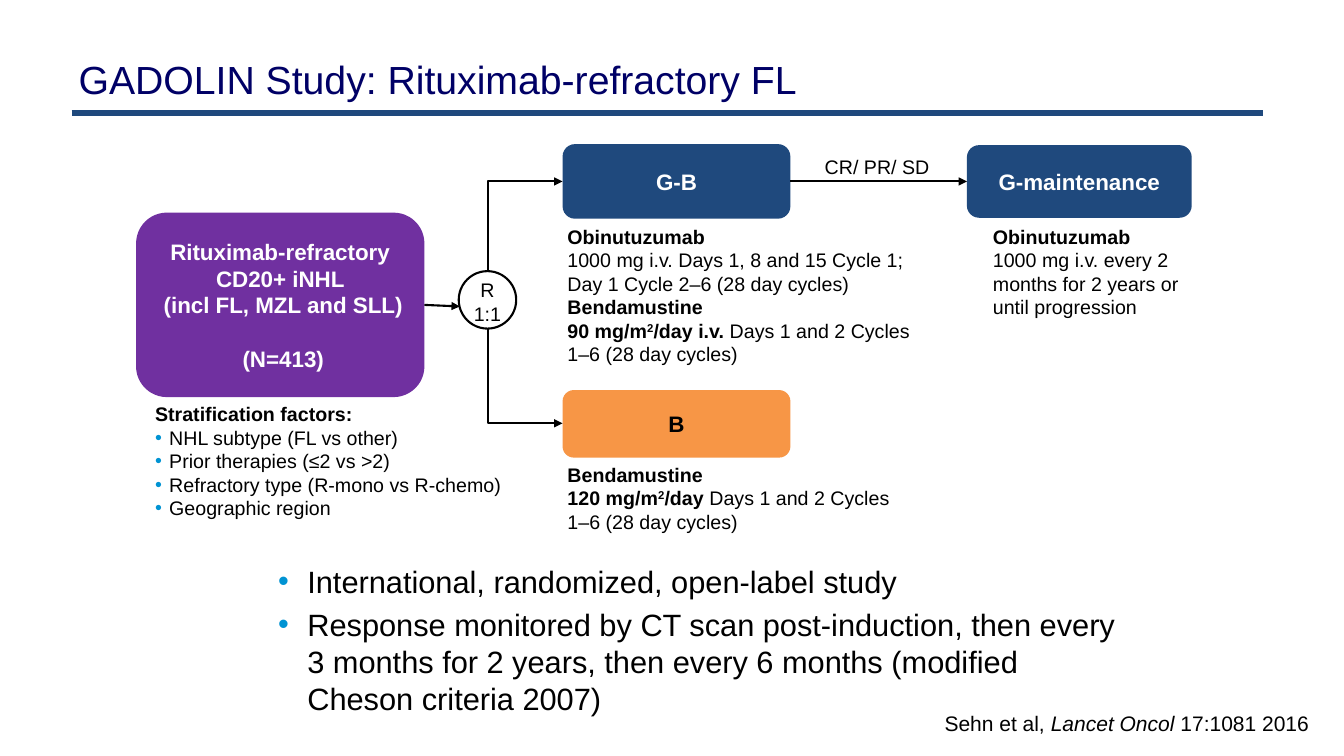
from pptx import Presentation, util as u
from pptx.dml.color import RGBColor
from pptx.enum import shapes as s, text as t
from pptx.oxml.ns import qn
from lxml import etree

HUE = {"ink": "000000", "white": "FFFFFF", "title": "000066", "navy": "1F497D",
       "plum": "7030A0", "gold": "F79646", "dot": "0093D3"}
deck = Presentation()
deck.slide_width, deck.slide_height = u.Inches(13.33), u.Inches(7.5)
cell = deck.slide_height / 75
page = deck.slides.add_slide(deck.slide_layouts[5])
draw = page.shapes


def grid(*cells):
    return [u.Emu(round(n * cell)) for n in cells]


def write(box, paras, size=14, hue="ink", align="LEFT", mid=False, inset=None,
          dots=0, indent=0, after=0, gap=0):
    frame = box.text_frame
    frame.word_wrap = True
    frame.vertical_anchor = t.MSO_ANCHOR.MIDDLE if mid else t.MSO_ANCHOR.TOP
    if inset is not None:
        frame.margin_left, frame.margin_top = u.Inches(inset), 0
        frame.margin_right = frame.margin_bottom = 0
    for i, runs in enumerate(paras):
        para = frame.paragraphs[0] if i == 0 else frame.add_paragraph()
        para.alignment = t.PP_ALIGN[align]
        if indent and i >= dots:
            props = para._p.get_or_add_pPr()
            props.set("marL", str(u.Inches(indent)))
            props.set("indent", str(-u.Inches(indent)))
            tint = etree.SubElement(props, qn("a:buClr"))
            etree.SubElement(tint, qn("a:srgbClr")).set("val", HUE["dot"])
            etree.SubElement(props, qn("a:buFont")).set("typeface", "Arial")
            etree.SubElement(props, qn("a:buChar")).set("char", "•")
        if after:
            para.space_after = u.Pt(after)
        if gap and i == len(paras) - 1:
            para.space_before = u.Pt(gap)
        for words, style in runs:
            for j, line in enumerate(words.split("\n")):
                if j:
                    para.add_line_break()
                run = para.add_run()
                run.text = line
                font = run.font
                font.name, font.size = "Arial", u.Pt(size)
                font.bold, font.italic = "b" in style, "i" in style
                font.color.rgb = RGBColor.from_string(HUE[hue])
                if "^" in style:
                    font._element.set("baseline", "30000")


head = draw.title
head.left, head.top, head.width, head.height = grid(6.8, 3.9, 90, 7.8)
write(head, [[("GADOLIN Study: Rituximab-refractory FL", "")]], size=28, hue="title", mid=True)

cards = {}
for name, place, fill, ink, paras, inset, gap in [
    ("combo", (55.8, 14.3, 22.6, 7.4), "navy", "white", [[("G-B", "b")]], 0, 0),
    ("single", (55.8, 38.7, 22.6, 6.7), "gold", "ink", [[("B", "b")]], 0, 0),
    ("cohort", (13.5, 21.1, 28.6, 18.3), "plum", "white",
     [[("Rituximab-refractory ", "b")], [("CD20+ iNHL \n(incl FL, MZL and SLL)", "b")],
      [("(N=413)", "b")]], 0.06, 19),
    ("upkeep", (95.9, 14.4, 22.3, 7.2), "navy", "white", [[("G-maintenance", "b")]], 0, 0),
]:
    card = cards[name] = draw.add_shape(s.MSO_SHAPE.ROUNDED_RECTANGLE, *grid(*place))
    card.shadow.inherit = False
    card.fill.solid()
    card.fill.fore_color.rgb = RGBColor.from_string(HUE[fill])
    card.line.fill.background()
    write(card, paras, size=16, hue=ink, align="CENTER", mid=True, inset=inset, gap=gap)

ring = draw.add_shape(s.MSO_SHAPE.OVAL, *grid(45.5, 26.9, 5.7, 5.7))
ring.shadow.inherit = False
ring.fill.background()
ring.line.color.rgb = RGBColor.from_string(HUE["ink"])
ring.line.width = u.Pt(1.5)

for ends, hue, width, tip, start, stop in [
    ((42.1, 30.3, 45.6, 30.4), "ink", 1.5, "tailEnd", "cohort", None),
    ((78.4, 18, 95.9, 18), "ink", 1.5, "tailEnd", "combo", "upkeep"),
    ((55.8, 18, 48.4, 26.9), "ink", 1.5, "headEnd", None, None),
    ((55.8, 42, 48.4, 32.6), "ink", 1.5, "headEnd", None, None),
    ((7.1, 11.2, 125.3, 11.2), "navy", 4.5, None, None, None),
]:
    bent = tip == "headEnd"
    kind = s.MSO_CONNECTOR.ELBOW if bent else s.MSO_CONNECTOR.STRAIGHT
    link = draw.add_connector(kind, *grid(*ends))
    if start:
        link.begin_connect(cards[start], 3)
    if stop:
        link.end_connect(cards[stop], 1)
    link.line.color.rgb = RGBColor.from_string(HUE[hue])
    link.line.width = u.Pt(width)
    props = link._element.spPr
    if bent:
        props.find(qn("a:prstGeom")).set("prst", "bentConnector2")
    if tip:
        etree.SubElement(props.find(qn("a:ln")), qn("a:" + tip)).set("type", "triangle")
    etree.SubElement(props, qn("a:effectLst"))

for place, paras, look in [
    ((80.5, 14.9, 13, 3.4), [[("CR/ PR/ SD", "")]], {"align": "CENTER"}),
    ((45.5, 27.6, 5.7, 2.4), [[("R", "")]], {"align": "CENTER", "inset": 0}),
    ((45.5, 30, 5.7, 2.4), [[("1:1", "")]], {"align": "CENTER", "inset": 0}),
    ((55.3, 21.8, 40.6, 15.1),
     [[("Obinutuzumab", "b")],
      [("1000 mg i.v. Days 1, 8 and 15 Cycle 1;\nDay 1 Cycle 2–6 (28 day cycles)", "")],
      [("Bendamustine", "b")],
      [("90 mg/m", "b"), ("2", "b^"), ("/day i.v. ", "b"),
       ("Days 1 and 2 Cycles\n1–6 (28 day cycles)", "")]], {}),
    ((97.5, 21.8, 22.3, 10.4),
     [[("Obinutuzumab", "b")],
      [("1000 mg i.v. every 2 months for 2 years or until progression", "")]], {}),
    ((55.3, 45.4, 34.5, 8.2),
     [[("Bendamustine", "b")],
      [("120 mg/m", "b"), ("2", "b^"), ("/day ", "b"),
       ("Days 1 and 2 Cycles 1–6 (28 day cycles)", "")]], {}),
    ((14.4, 39.4, 41.4, 12.8),
     [[("Stratification factors:", "b")], [("NHL subtype (FL vs other)", "")],
      [("Prior therapies (≤2 vs >2)", "")], [("Refractory type (R-mono vs R-chemo)", "")],
      [("Geographic region", "")]], {"dots": 1, "indent": 0.14}),
    ((26.6, 55.3, 86.5, 9.2),
     [[("International, randomized, open-label study", "")],
      [("Response monitored by CT scan post-induction, then every 3 months for 2 years, "
        "then every 6 months (modified Cheson criteria 2007)", "")]],
     {"size": 22, "indent": 0.29, "after": 4.5}),
    ((92.7, 70, 40.6, 3.5),
     [[("Sehn et al, ", ""), ("Lancet Oncol ", "i"), ("17:1081 2016", "")]], {"size": 15}),
]:
    write(draw.add_textbox(*grid(*place)), paras, **look)

deck.save("out.pptx")
